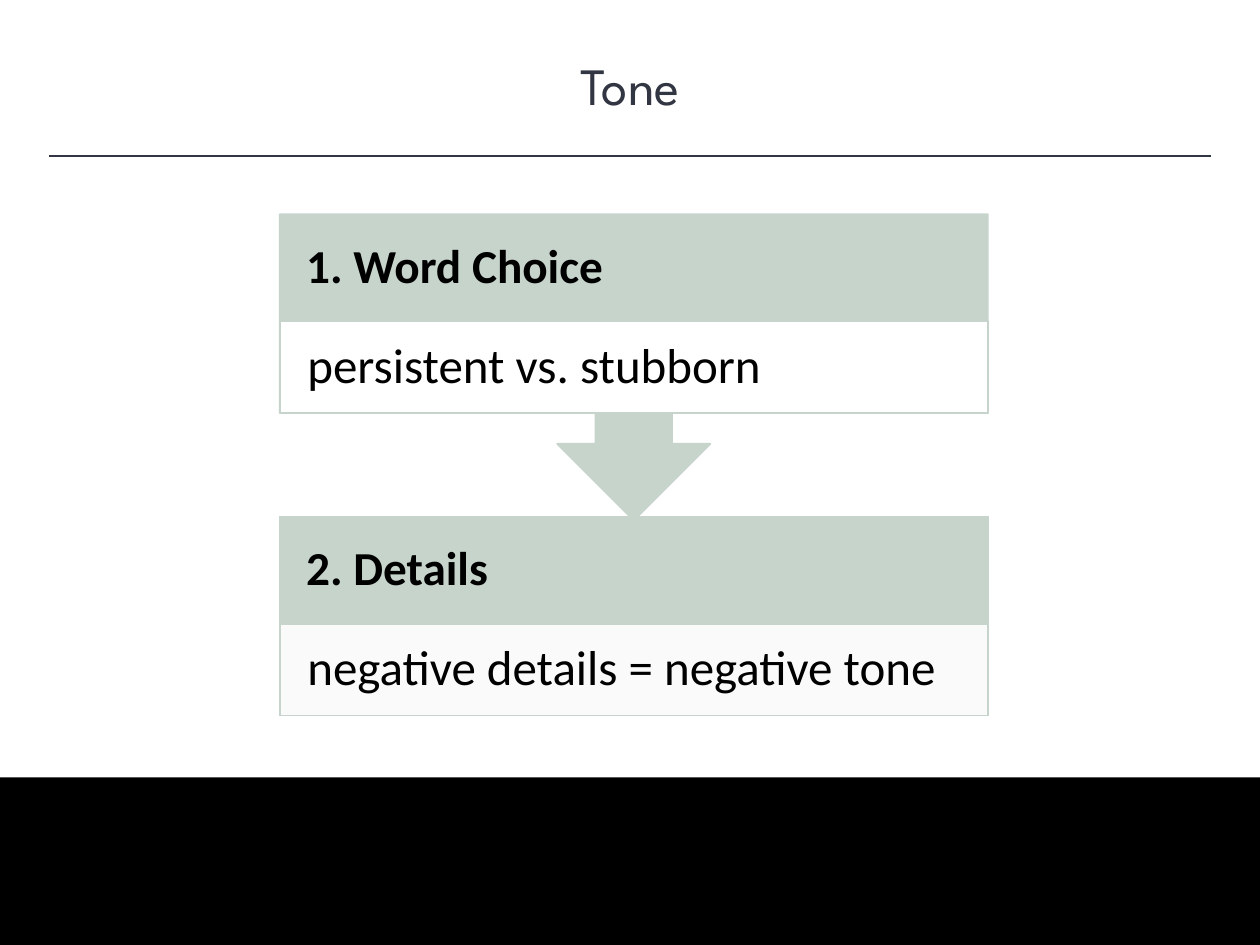
from lxml import etree
from pptx import Presentation
from pptx.dml.color import RGBColor
from pptx.enum import shapes, text
from pptx.oxml.ns import qn
from pptx.util import Inches, Pt

COLORS = {"ink": "323542", "sage": "C7D4CB", "black": "000000", "white": "FFFFFF"}
LEFT, WIDTH = 2.22, 5.62
HEAD_H, BODY_H = 0.85, 0.73
SHAPE = shapes.MSO_SHAPE


def write(sp, words, font="Calibri", size=28, color="black", bold=False,
          align=text.PP_ALIGN.LEFT, anchor=text.MSO_ANCHOR.MIDDLE,
          inset=(0.22, 0.04), spacing=0.9):
    tf = sp.text_frame
    tf.word_wrap = True
    tf.auto_size = text.MSO_AUTO_SIZE.NONE
    tf.vertical_anchor = anchor
    tf.margin_left = tf.margin_right = Inches(inset[0])
    tf.margin_top = tf.margin_bottom = Inches(inset[1])
    p = tf.paragraphs[0]
    p.alignment = align
    p.line_spacing = spacing
    r = p.add_run()
    r.text = words
    r.font.name = font
    r.font.size = Pt(size)
    r.font.bold = bold
    r.font.color.rgb = RGBColor.from_string(COLORS[color])


def add_box(s, kind, left, top, width, height, fill, line=None):
    sp = s.shapes.add_shape(kind, Inches(left), Inches(top), Inches(width), Inches(height))
    sp.shadow.inherit = False
    sp.fill.solid()
    sp.fill.fore_color.rgb = RGBColor.from_string(COLORS[fill])
    if line:
        sp.line.color.rgb = RGBColor.from_string(COLORS[line])
        sp.line.width = Pt(1)
    else:
        sp.line.fill.background()
    return sp


prs = Presentation()
prs.slide_width, prs.slide_height = Inches(10), Inches(7.5)
s = prs.slides.add_slide(prs.slide_layouts[5])
s.background.fill.solid()
s.background.fill.fore_color.rgb = RGBColor.from_string(COLORS["white"])

title = s.shapes.title
title.left, title.top = Inches(0), Inches(0.37)
title.width, title.height = Inches(10), Inches(0.61)
write(title, "Tone", font="League Spartan", size=30, color="ink",
      align=text.PP_ALIGN.CENTER, anchor=text.MSO_ANCHOR.TOP, inset=(0.1, 0.05), spacing=1.0)

add_box(s, SHAPE.RECTANGLE, 0, 6.17, 10, 1.33, "black")

rule = s.shapes.add_connector(shapes.MSO_CONNECTOR.STRAIGHT,
                              Inches(0.39), Inches(1.24), Inches(9.61), Inches(1.24))
rule.line.color.rgb = RGBColor.from_string(COLORS["ink"])
rule.line.width = Pt(1)
etree.SubElement(rule._element.spPr, qn("a:effectLst"))

steps = [
    (SHAPE.RECTANGLE, 4.1, 1.58, "2. Details", "negative details = negative tone", 90),
    (SHAPE.DOWN_ARROW_CALLOUT, 1.7, 2.43, "1. Word Choice", "persistent vs. stubborn", 100),
]
for kind, top, height, heading, example, opacity in steps:
    add_box(s, kind, LEFT, top, WIDTH, height, "sage", "sage")
    head = s.shapes.add_textbox(Inches(LEFT), Inches(top), Inches(WIDTH), Inches(HEAD_H))
    write(head, heading, size=27, bold=True, inset=(0.21, 0.21))
    body = add_box(s, SHAPE.RECTANGLE, LEFT, top + HEAD_H, WIDTH, BODY_H, "white", "sage")
    if opacity < 100:
        color = body._element.spPr.find(qn("a:solidFill"))[0]
        etree.SubElement(color, qn("a:alpha"), val=str(opacity * 1000))
    write(body, example)

prs.save("out.pptx")
